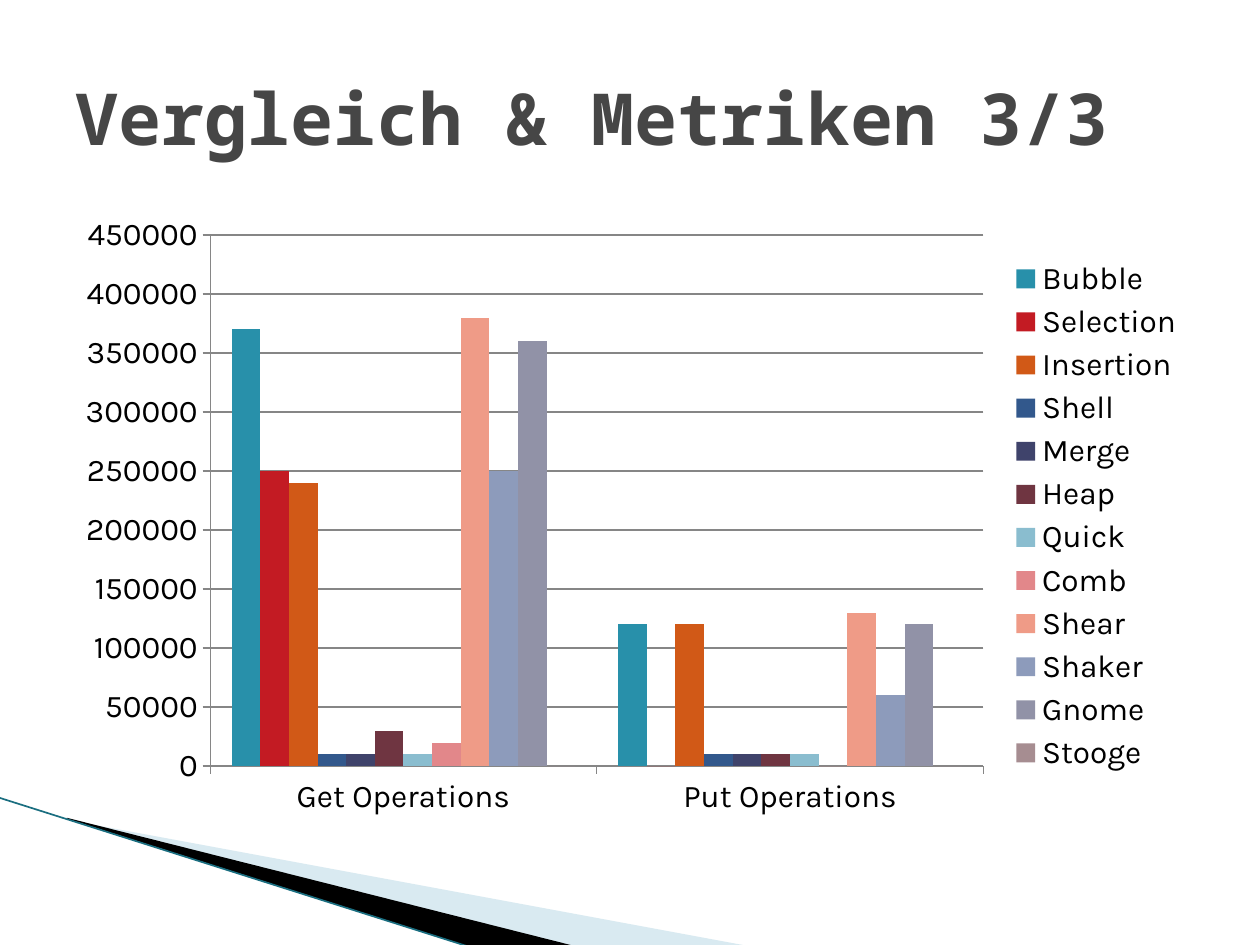
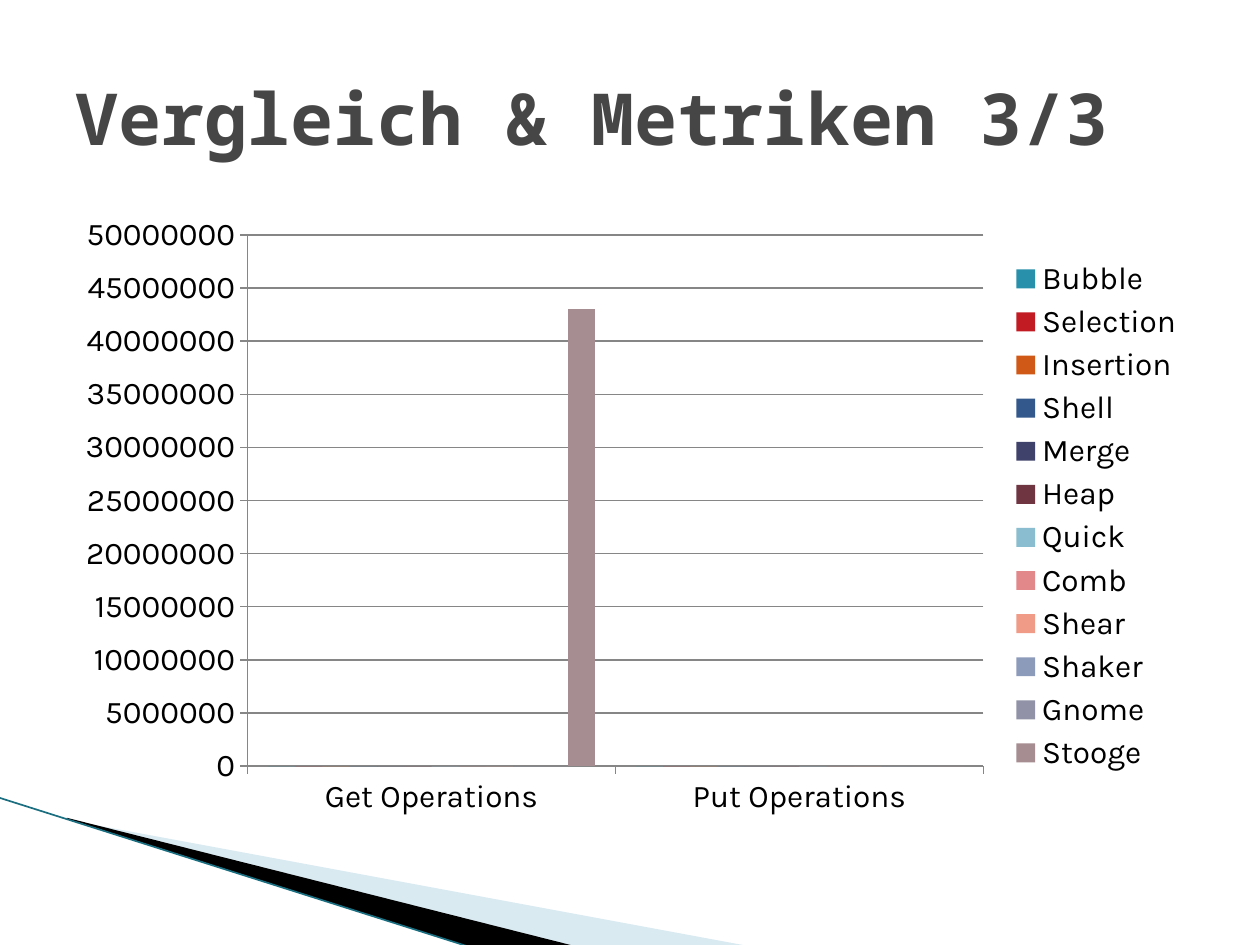
from lxml import etree
from pptx import Presentation
from pptx import util as u
from pptx.chart import data
from pptx.dml.color import RGBColor
from pptx.enum import chart as ch, shapes, text
from pptx.oxml.ns import qn

TITLE_GREY = RGBColor(0x46, 0x46, 0x46)
BLACK = RGBColor(0, 0, 0)
PALE_BLUE = RGBColor(0xA0, 0xCB, 0xDC)
TEAL = RGBColor(0x1A, 0x6E, 0x80)
GRID_GREY = RGBColor(0x86, 0x86, 0x86)
TITLE_FONT = {"name": "Noto Sans Mono", "size": u.Pt(41), "bold": True}
CHART_FONT = {"name": "Karla", "size": u.Pt(18)}

TITLE = "Vergleich & Metriken 3/3"
OPERATIONS = ["Get Operations", "Put Operations"]
# Algorithm: (get operations, put operations), column colour
ALGORITHMS = {
    "Bubble": ((370000, 120000), RGBColor(0x28, 0x90, 0xAA)),
    "Selection": ((250000, 0), RGBColor(0xC3, 0x1B, 0x23)),
    "Insertion": ((240000, 120000), RGBColor(0xD1, 0x59, 0x17)),
    "Shell": ((10000, 10000), RGBColor(0x32, 0x58, 0x8C)),
    "Merge": ((10000, 10000), RGBColor(0x3F, 0x43, 0x6B)),
    "Heap": ((30000, 10000), RGBColor(0x6F, 0x35, 0x41)),
    "Quick": ((10000, 10000), RGBColor(0x8A, 0xBD, 0xCF)),
    "Comb": ((20000, 0), RGBColor(0xE2, 0x87, 0x8A)),
    "Shear": ((380000, 130000), RGBColor(0xEF, 0x9B, 0x87)),
    "Shaker": ((250000, 60000), RGBColor(0x8D, 0x9B, 0xBB)),
    "Gnome": ((360000, 120000), RGBColor(0x91, 0x92, 0xA7)),
    "Stooge": ((0, 0), RGBColor(0xA6, 0x8D, 0x91)),
}
STOOGE_COUNTS = (43000000, 0)

PALE_BAND = [(0.55, 6.51), (5.95, 7.51), (4.56, 7.51), (0.55, 6.5)]
BLACK_BAND = [(0.53, 6.49), (4.57, 7.51), (3.72, 7.51), (0.54, 6.5)]


def set_font(font, color, values):
    for key, value in values.items():
        setattr(font, key, value)
    font.color.rgb = color


def add_band(slide, corners, color, alpha=None):
    """Draw a filled corner band; alpha is its opacity in percent."""
    points = [(u.Inches(x), u.Inches(y)) for x, y in corners]
    builder = slide.shapes.build_freeform(*points[0])
    builder.add_line_segments(points[1:])
    band = builder.convert_to_shape()
    band.shadow.inherit = False
    band.line.fill.background()
    band.fill.solid()
    band.fill.fore_color.rgb = color
    if alpha is not None:
        fill_color = band.fill._xPr.find(f".//{qn('a:srgbClr')}")
        etree.SubElement(fill_color, qn("a:alpha"), val=str(alpha * 1000))


def add_corner(slide):
    """Draw the bands and the edge line at the bottom left."""
    add_band(slide, PALE_BAND, PALE_BLUE, 40)
    add_band(slide, BLACK_BAND, BLACK)
    edge = slide.shapes.add_connector(
        shapes.MSO_CONNECTOR.STRAIGHT,
        u.Inches(-0.01), u.Inches(6.33), u.Inches(3.71), u.Inches(7.51))
    edge.line.color.rgb = TEAL
    edge.line.width = u.Pt(0.95)
    etree.SubElement(edge._element.spPr, qn("a:effectLst"))


def add_title(slide):
    box = slide.shapes.add_textbox(
        u.Inches(0.5), u.Inches(0.3), u.Inches(9), u.Inches(1.25))
    frame = box.text_frame
    frame.word_wrap = True
    frame.vertical_anchor = text.MSO_ANCHOR.MIDDLE
    run = frame.paragraphs[0].add_run()
    run.text = TITLE
    set_font(run.font, TITLE_GREY, TITLE_FONT)


def style_axis(axis):
    axis.major_tick_mark = ch.XL_TICK_MARK.OUTSIDE
    axis.minor_tick_mark = ch.XL_TICK_MARK.NONE
    axis.format.line.color.rgb = GRID_GREY
    axis.format.line.width = u.Pt(0.75)


def add_operations_chart(slide, counts, top, step):
    """Plot the counts per algorithm on a value axis from 0 to top."""
    chart_data = data.CategoryChartData(number_format="General")
    chart_data.categories = OPERATIONS
    for name, values in counts.items():
        chart_data.add_series(name, values)
    chart = slide.shapes.add_chart(
        ch.XL_CHART_TYPE.COLUMN_CLUSTERED, u.Inches(0.5), u.Inches(1.62),
        u.Inches(9), u.Inches(4.95), chart_data).chart
    set_font(chart.font, BLACK, CHART_FONT)
    chart.has_title = False
    chart.has_legend = True
    chart.legend.position = ch.XL_LEGEND_POSITION.RIGHT
    chart.legend.include_in_layout = False

    plot = chart.plots[0]
    plot.gap_width = 150
    plot.overlap = 0
    plot.vary_by_categories = False
    for series in plot.series:
        series.invert_if_negative = False
        series.format.fill.solid()
        series.format.fill.fore_color.rgb = ALGORITHMS[series.name][1]

    style_axis(chart.category_axis)
    scale = chart.value_axis
    style_axis(scale)
    scale.minimum_scale, scale.maximum_scale, scale.major_unit = 0, top, step
    scale.has_major_gridlines = True
    scale.major_gridlines.format.line.color.rgb = GRID_GREY
    scale.major_gridlines.format.line.width = u.Pt(0.75)


def add_metrics_slide(prs, counts, top, step):
    slide = prs.slides.add_slide(prs.slide_layouts[6])
    add_corner(slide)
    add_operations_chart(slide, counts, top, step)
    add_title(slide)


def main():
    prs = Presentation()
    prs.slide_width, prs.slide_height = u.Inches(10), u.Inches(7.5)
    counts = {name: values for name, (values, _) in ALGORITHMS.items()}
    add_metrics_slide(prs, counts, 450000, 50000)
    # At this scale every count but Stooge's rounds to zero
    stooge_counts = dict.fromkeys(counts, (0, 0)) | {"Stooge": STOOGE_COUNTS}
    add_metrics_slide(prs, stooge_counts, 50000000, 5000000)
    prs.save("out.pptx")


if __name__ == "__main__":
    main()
